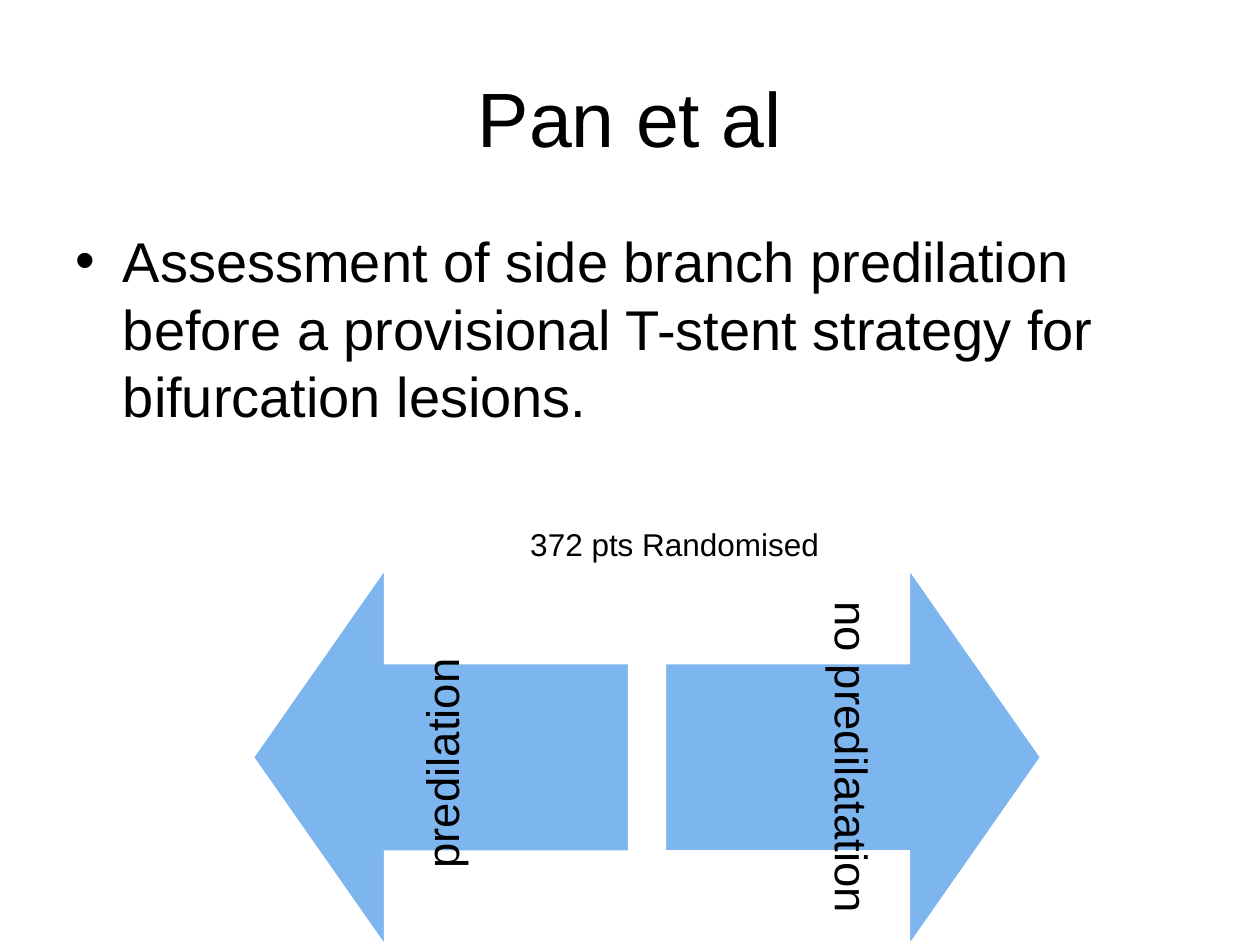
from dataclasses import dataclass

from pptx import Presentation
from pptx.dml.color import RGBColor
from pptx.enum.shapes import MSO_SHAPE as Shape
from pptx.enum.text import MSO_ANCHOR as Anchor, MSO_AUTO_SIZE as AutoSize, PP_ALIGN as Align
from pptx.util import Inches, Pt


@dataclass(frozen=True)
class Theme:
    font: str = "Arial"
    ink: RGBColor = RGBColor(0x00, 0x00, 0x00)
    paper: RGBColor = RGBColor(0xFF, 0xFF, 0xFF)
    arrow: RGBColor = RGBColor(0x7D, 0xB6, 0xEF)
    title_size: int = 44
    body_size: int = 32
    label_size: int = 26
    caption_size: int = 18


THEME = Theme()


def apply(target, formats):
    for name, value in formats.items():
        setattr(target, name, value)


def place(shape, box):
    names = ("left", "top", "width", "height")
    apply(shape, {name: Inches(value) for name, value in zip(names, box)})


def write(shape, text, size, align=None, **frame_formats):
    frame = shape.text_frame
    apply(frame, {"word_wrap": True, **frame_formats})
    para = frame.paragraphs[0]
    para.alignment = align
    span = para.add_run()
    span.text = text
    apply(span.font, {"name": THEME.font, "size": Pt(size)})
    span.font.color.rgb = THEME.ink


# Title or list in a template placeholder
def fill_placeholder(placeholder, box, text, size, align=None, **frame_formats):
    place(placeholder, box)
    write(placeholder, text, size, align, **frame_formats)


# One block arrow with its label turned the same way
def add_arm(group, box, text, rotation):
    arrow = group.shapes.add_shape(Shape.UP_ARROW, 0, 0, 0, 0)
    place(arrow, box)
    arrow.rotation = rotation
    arrow.adjustments[0] = 0.5
    arrow.adjustments[1] = 0.35
    arrow.shadow.inherit = False
    arrow.fill.solid()
    arrow.fill.fore_color.rgb = THEME.arrow
    arrow.line.color.rgb = THEME.paper
    arrow.line.width = Pt(1)

    label = group.shapes.add_textbox(0, 0, 0, 0)
    place(label, box)
    label.rotation = rotation
    sides = ("left", "right", "top", "bottom")
    margins = {f"margin_{side}": Inches(0.2) for side in sides}
    write(label, text, THEME.label_size, Align.CENTER,
          vertical_anchor=Anchor.MIDDLE, **margins)


# Two square arms at the ends of the box, pointing apart
def add_arms(page, box):
    left, top, width, side = box
    group = page.shapes.add_group_shape()
    add_arm(group, (left, top, side, side), "predilation ", 270)
    add_arm(group, (left + width - side, top, side, side), "no predilatation", 90)


# Caption above the arrows
def add_caption(page, box, text):
    caption = page.shapes.add_textbox(0, 0, 0, 0)
    place(caption, box)
    write(caption, text, THEME.caption_size, auto_size=AutoSize.SHAPE_TO_FIT_TEXT)


def main():
    deck = Presentation()
    deck.slide_width, deck.slide_height = Inches(10), Inches(7.5)
    page = deck.slides.add_slide(deck.slide_layouts[1])
    fill_placeholder(page.shapes.title, (0.5, 0.3, 9, 1.25), "Pan et al",
                     THEME.title_size, Align.CENTER, vertical_anchor=Anchor.MIDDLE)
    fill_placeholder(page.placeholders[1], (0.5, 1.75, 9, 4.95),
                     "Assessment of side branch predilation before a provisional "
                     "T-stent strategy for bifurcation lesions.", THEME.body_size)
    add_arms(page, (2.01, 4.52, 6.25, 2.98))
    add_caption(page, (4.11, 4.12, 2.59, 0.4), "372 pts Randomised")
    deck.save("out.pptx")


if __name__ == "__main__":
    main()
